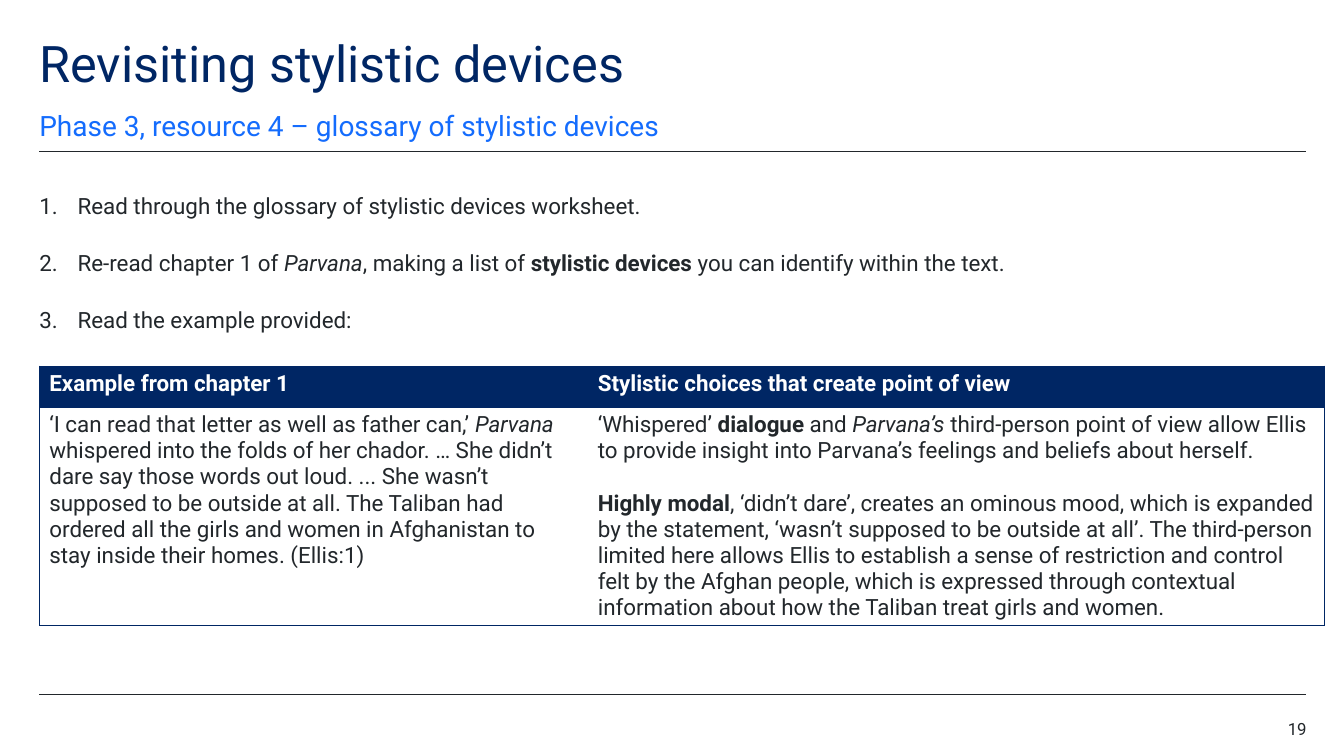
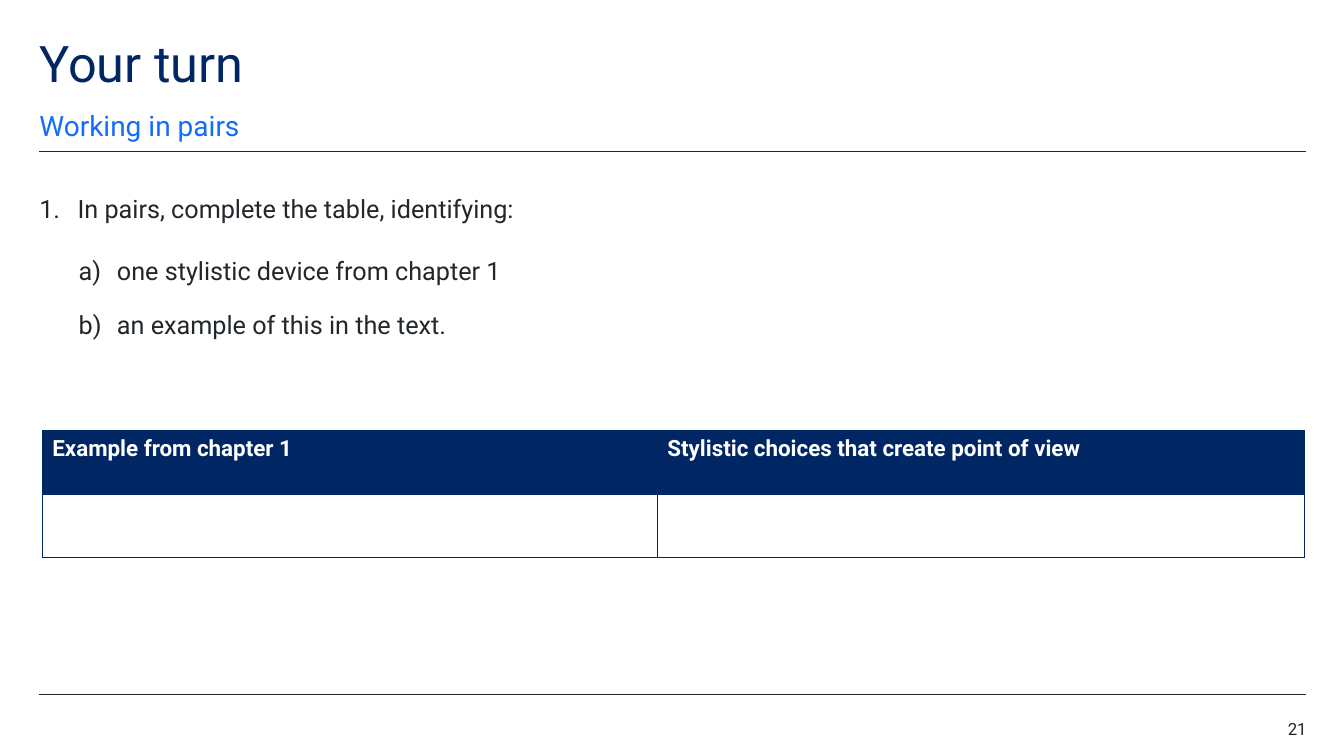
from lxml import etree
from pptx import Presentation
from pptx.dml.color import RGBColor
from pptx.enum.shapes import MSO_CONNECTOR as Link
from pptx.enum.text import MSO_ANCHOR as Anchor, MSO_AUTO_SIZE as Fit, PP_ALIGN as Align
from pptx.oxml.ns import qn
from pptx.util import Inches, Pt

NAVY = RGBColor(0x00, 0x26, 0x64)
BLUE = RGBColor(0x14, 0x6C, 0xFD)
INK = RGBColor(0x22, 0x27, 0x2B)
WHITE = RGBColor(0xFF, 0xFF, 0xFF)
FONT = "Roboto"
LEFT, RIGHT = 0.39, 12.95
PLAIN, BOLD, SLANT = "", "b", "i"
NO_GRID = "{2D5ABB26-0587-4C30-8999-92F81FD0307C}"
HEADS = ["Example from chapter 1", "Stylistic choices that create point of view"]


def write(par, runs, size, color):
    for text, style in runs:
        run = par.add_run()
        run.text = text
        font = run.font
        font.name, font.size, font.color.rgb = FONT, Pt(size), color
        font.bold, font.italic = style == BOLD, style == SLANT


def frame(shape, left, top, width, height, anchor=Anchor.TOP):
    shape.left, shape.top = Inches(left), Inches(top)
    shape.width, shape.height = Inches(width), Inches(height)
    body = shape.text_frame
    body.margin_left = body.margin_right = body.margin_top = body.margin_bottom = 0
    body.word_wrap, body.auto_size = True, Fit.NONE
    body.vertical_anchor = anchor
    return body


quote = [
    ("‘I can read that letter as well as father can,’ ", PLAIN),
    ("Parvana", SLANT),
    (" whispered into the folds of her chador. … She didn’t dare say those words out loud. ... "
     "She wasn’t supposed to be outside at all. The Taliban had ordered all the girls and women "
     "in Afghanistan to stay inside their homes. (Ellis:1)", PLAIN),
]
voice = [
    ("‘Whispered’ ", PLAIN),
    ("dialogue", BOLD),
    (" and ", PLAIN),
    ("Parvana’s", SLANT),
    (" third-person point of view allow Ellis to provide insight into Parvana’s feelings "
     "and beliefs about herself.", PLAIN),
]
mood = [
    ("Highly modal", BOLD),
    (", ‘didn’t dare’, creates an ominous mood, which is expanded by the statement, ‘wasn’t "
     "supposed to be outside at all’. The third-person limited here allows Ellis to establish "
     "a sense of restriction and control felt by the Afghan people, which is expressed through "
     "contextual information about how the Taliban treat girls and women.", PLAIN),
]

pages = [
    dict(
        title="Revisiting stylistic devices",
        sub="Phase 3, resource 4 – glossary of stylistic devices",
        size=16,
        steps=[
            (0, [("Read through the glossary of stylistic devices worksheet.", PLAIN)]),
            (0, [("Re-read chapter 1 of ", PLAIN), ("Parvana", SLANT),
                 (", making a list of ", PLAIN), ("stylistic devices ", BOLD),
                 ("you can identify within the text.", PLAIN)]),
            (0, [("Read the example provided:", PLAIN)]),
        ],
        left=LEFT, top=3.63, cols=[5.44, 7.3], row=0.41,
        cells=[[quote], [voice, mood]], sides=["LTB", "RTB"],
        number="19",
    ),
    dict(
        title="Your turn",
        sub="Working in pairs",
        size=18,
        steps=[
            (0, [("In pairs, complete the table, identifying:", PLAIN)]),
            (1, [("one stylistic device from chapter 1", PLAIN)]),
            (1, [("an example of this in the text.", PLAIN)]),
        ],
        left=0.42, top=4.27, cols=[6.1, 6.42], row=0.63,
        cells=[[], []], sides=["LRTB", "LRTB"],
        number="21",
    ),
]

deck = Presentation()
deck.slide_width, deck.slide_height = Inches(13.33), Inches(7.5)

for page in pages:
    slide = deck.slides.add_slide(deck.slide_layouts[5])
    shapes = slide.shapes

    for y in (1.5, 6.89):
        rule = shapes.add_connector(Link.STRAIGHT, Inches(LEFT), Inches(y), Inches(RIGHT), Inches(y))
        rule.line.color.rgb, rule.line.width = INK, Pt(0.5)
        etree.SubElement(rule._element.spPr, qn("a:effectLst"))

    par = frame(shapes.title, LEFT, 0.39, 11.02, 0.6).paragraphs[0]
    par.alignment, par.line_spacing = Align.LEFT, 0.9
    write(par, [(page["title"], PLAIN)], 36, NAVY)

    box = shapes.add_textbox(0, 0, 0, 0)
    par = frame(box, LEFT, 1.07, 11.02, 0.34, Anchor.BOTTOM).paragraphs[0]
    par.line_spacing, par.space_after = 1.5, Pt(12)
    write(par, [(page["sub"], PLAIN)], 20, BLUE)

    box = shapes.add_textbox(0, 0, 0, 0)
    body = frame(box, LEFT, 1.77, RIGHT - LEFT, 1.8)
    for i, (level, runs) in enumerate(page["steps"]):
        par = body.add_paragraph() if i else body.paragraphs[0]
        par.level, par.line_spacing = level, 1.5
        par.space_after = Pt(6 if level else 12)
        props = par._p.get_or_add_pPr()
        props.set("marL", str(Inches(0.77 if level else 0.38)))
        props.set("indent", str(-Inches(0.38)))
        etree.SubElement(props, qn("a:buFont"), typeface=FONT)
        kind = "alphaLcParenR" if level else "arabicPeriod"
        etree.SubElement(props, qn("a:buAutoNum"), type=kind)
        write(par, runs, page["size"], INK)

    cols, row = page["cols"], page["row"]
    grid = shapes.add_table(2, len(cols), Inches(page["left"]), Inches(page["top"]),
                            Inches(sum(cols)), Inches(2 * row)).table
    grid.first_row = grid.horz_banding = False
    grid._tbl.tblPr.find(qn("a:tableStyleId")).text = NO_GRID
    for line in grid.rows:
        line.height = Inches(row)
    for c, width in enumerate(cols):
        grid.columns[c].width = Inches(width)
        head = [[(HEADS[c], BOLD)]]
        edges = ["LT", "RT"][c]
        looks = [(head, edges, NAVY, WHITE), (page["cells"][c], page["sides"][c], WHITE, INK)]
        for r, (paras, sides, fill, color) in enumerate(looks):
            cell = grid.cell(r, c)
            props = cell._tc.get_or_add_tcPr()
            for side in sides:
                edge = etree.SubElement(props, qn("a:ln" + side), w=str(Pt(0.5)))
                paint = etree.SubElement(edge, qn("a:solidFill"))
                etree.SubElement(paint, qn("a:srgbClr"), val=str(NAVY))
            cell.fill.solid()
            cell.fill.fore_color.rgb = fill
            body = cell.text_frame
            for i, runs in enumerate(paras):
                par = body.add_paragraph() if i else body.paragraphs[0]
                if i:
                    par.space_before = Pt(18.75)
                write(par, runs, 16, color)

    box = shapes.add_textbox(0, 0, 0, 0)
    par = frame(box, 12.17, 7.13, 0.79, 0.2).paragraphs[0]
    par.alignment = Align.RIGHT
    write(par, [(page["number"], PLAIN)], 12, INK)

deck.save("out.pptx")
